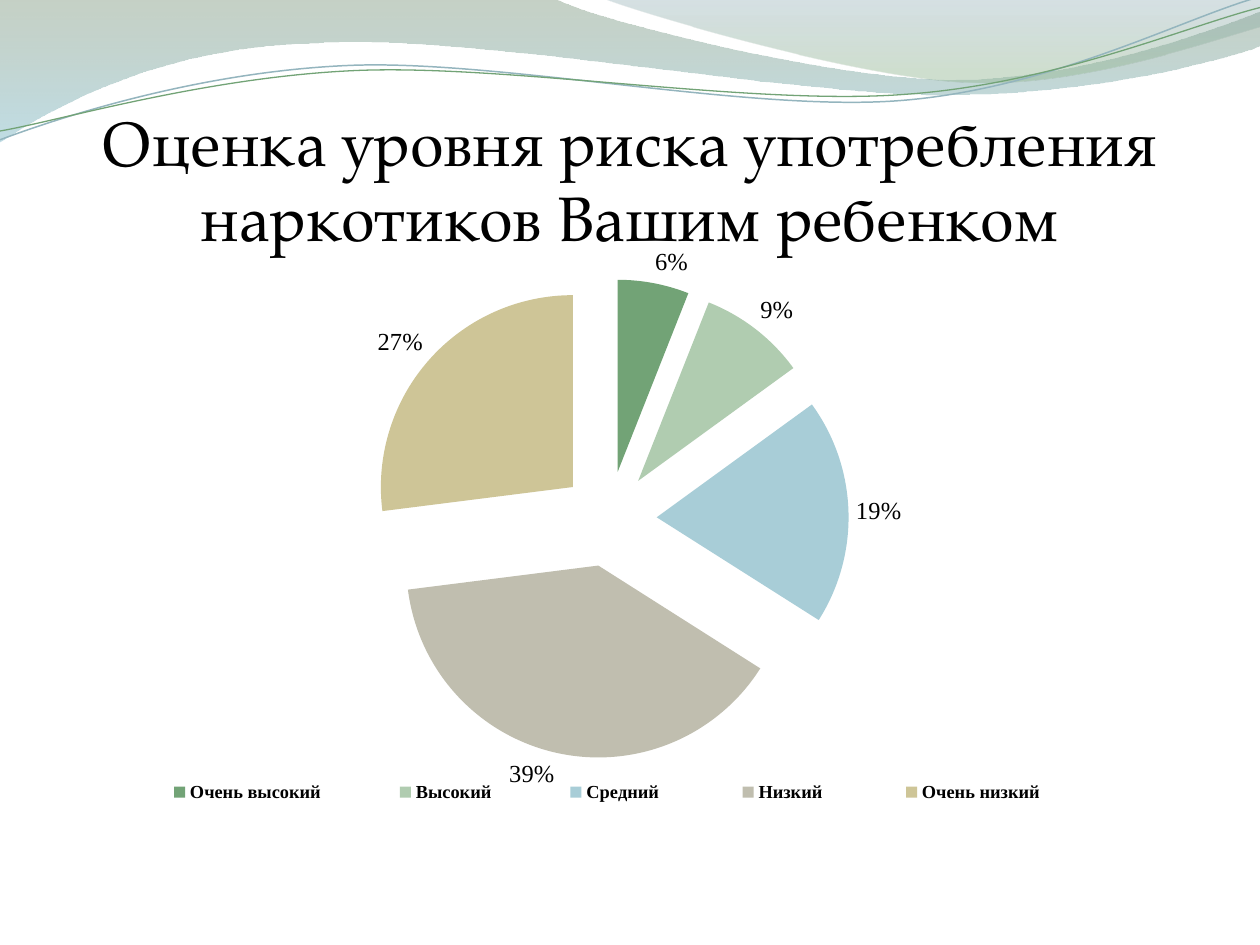
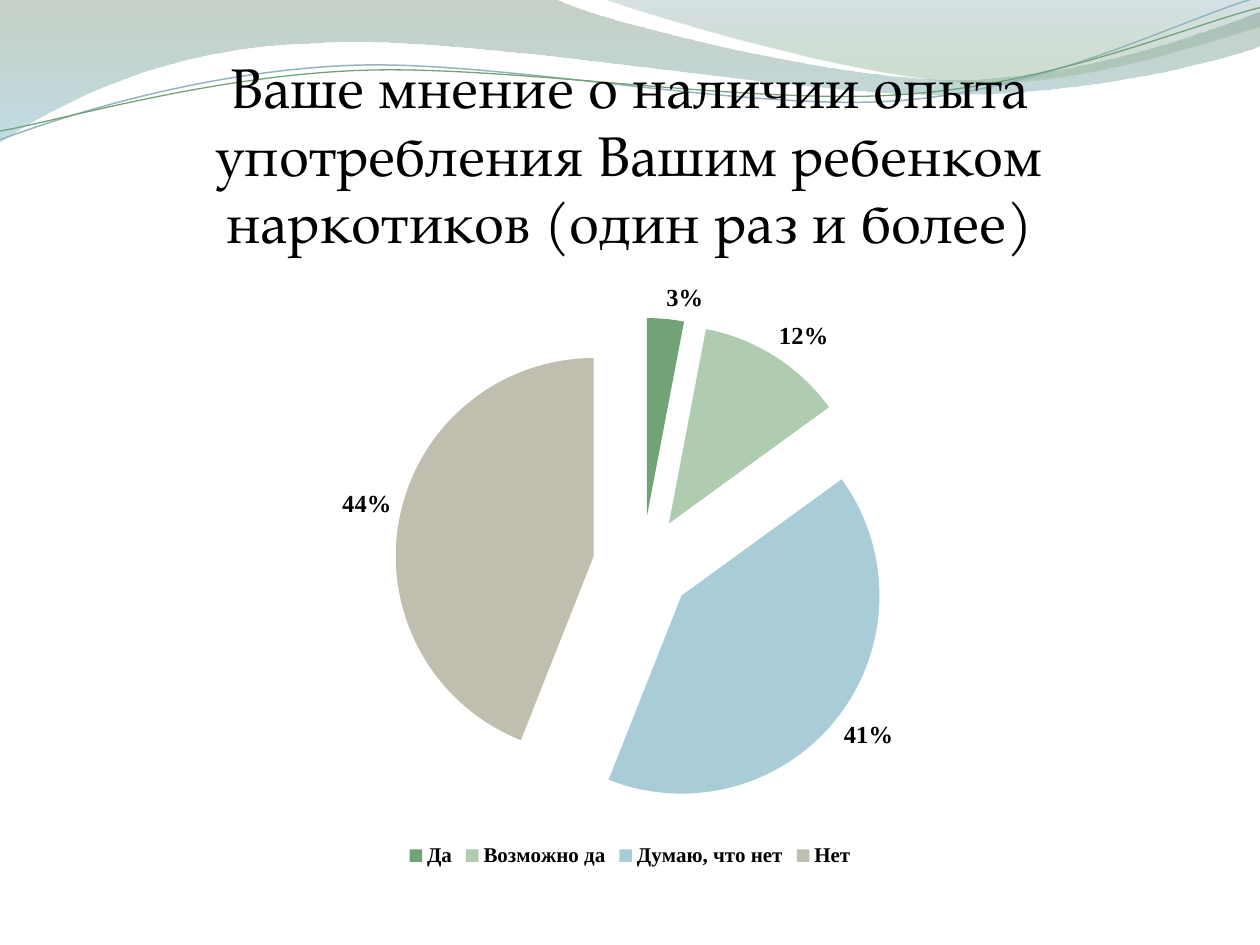
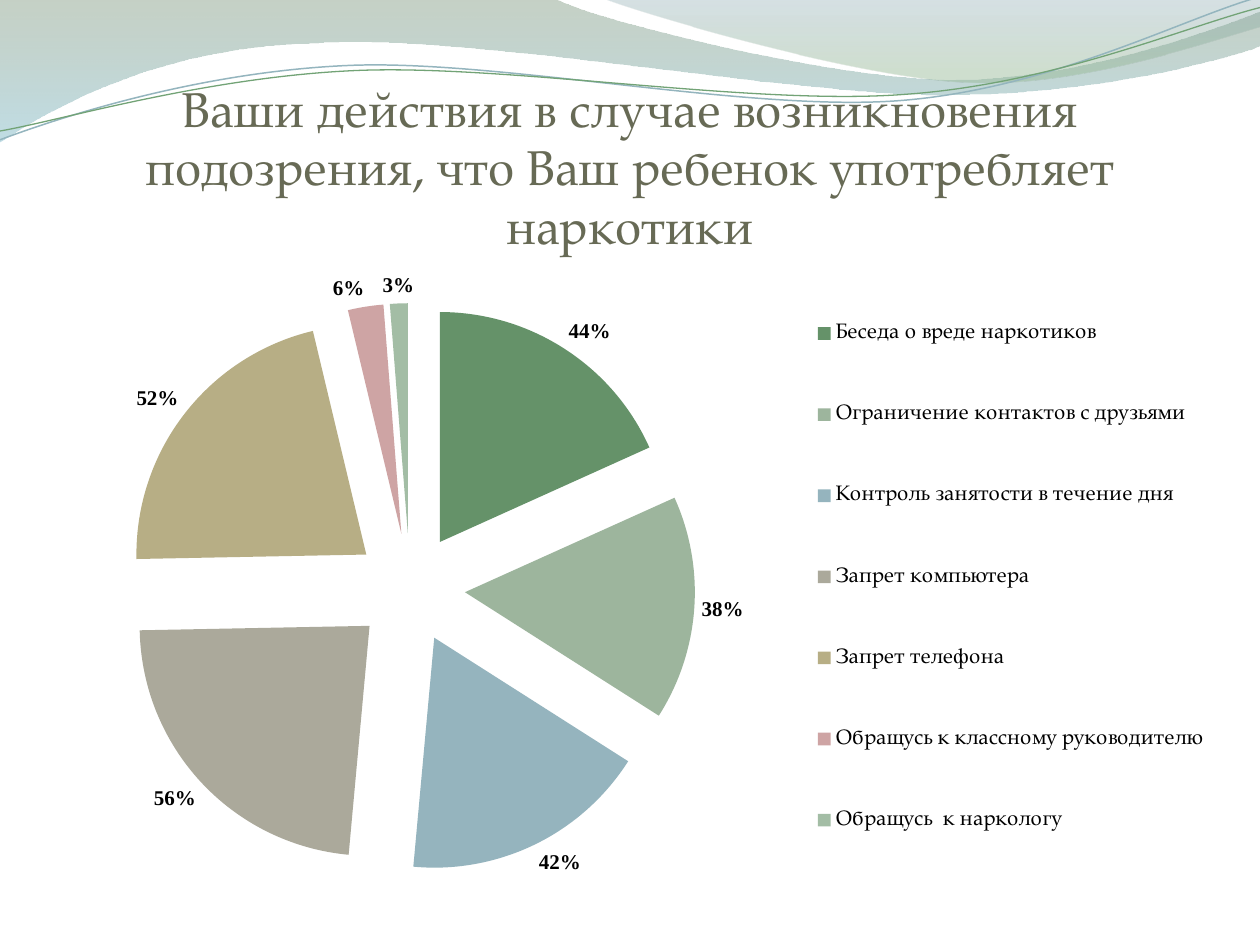
from dataclasses import dataclass

from lxml.etree import SubElement
from pptx import Presentation
from pptx.chart.data import CategoryChartData
from pptx.dml.color import RGBColor
from pptx.enum.chart import XL_CHART_TYPE as CT, XL_LABEL_POSITION as LabelPos, XL_LEGEND_POSITION as LegendPos
from pptx.enum.text import MSO_ANCHOR as Anchor, PP_ALIGN as Align
from pptx.oxml.ns import qn
from pptx.util import Inches, Pt


@dataclass(frozen=True)
class Theme:
    title_font: str = "TeX Gyre Pagella"
    label_font: str = "Times New Roman"
    ink: str = "000000"
    olive: str = "676A55"
    base_size: float = 10
    slices: tuple = ("72A376", "B0CCB0", "A8CDD7", "C0BEAF", "CEC597")
    deep_slices: tuple = ("659269", "9DB59D", "95B4BE", "ABA99B", "B7AE85", "CEA4A4", "A3BDA5")


THEME = Theme()
WIDTH, HEIGHT = Inches(10), Inches(7.5)
# All boxes are left, top, width, height in percent of the slide or chart.
TITLE_BOX = (5, 10.27, 90, 16.67)

# Wave outlines in tenths of the slide width: a start, then cubic curves or
# single line ends. Bands add gradient stops (position, colour, opacity %).
BANDS = [
    ([(0, 0), [(4.4, -0.01)],
      [(4.76, 0.17), (6.64, 0.63), (7.58, 0.63)],
      [(8.53, 0.63), (9.58, 0.26), (10, 0.09)],
      [(10.01, 0.36)],
      [(9.83, 0.44), (8.7, 0.76), (7.46, 0.75)],
      [(6.22, 0.75), (3.82, 0.28), (2.57, 0.34)],
      [(1.29, 0.36), (0.46, 0.83), (-0.01, 1.13)]],
     [(0, "809980", 45), (1, "8DC1CF", 55)]),
    ([(4.79, -0.01),
      [(5.09, 0.11), (6.82, 0.62), (7.69, 0.65)],
      [(8.56, 0.69), (9.61, 0.32), (10, 0.21)],
      [(10, 0)]],
     [(0, "779BA4", 30), (0.8, "96B996", 45)]),
]
STRANDS = [
    ([(0, 1.11),
      [(0.48, 0.93), (1.58, 0.57), (2.77, 0.52)],
      [(3.95, 0.47), (5.93, 0.89), (7.13, 0.8)],
      [(8.33, 0.71), (9.38, 0.15), (9.98, -0.02)]],
     "94B5BE", 0.85),
    ([(0, 1.04),
      [(0.47, 0.96), (1.64, 0.61), (2.83, 0.56)],
      [(4.03, 0.51), (5.97, 0.84), (7.17, 0.75)],
      [(8.36, 0.67), (9.41, 0.21), (10, 0.06)]],
     "72A376", 0.75),
]


def rgb(color):
    return RGBColor.from_string(color)


def place(box):
    """Turn percentages of the slide into lengths."""
    return [round(share * side / 100) for share, side in zip(box, (WIDTH, HEIGHT) * 2)]


def style_font(font, size, name, color=THEME.ink, bold=False):
    font.size, font.name, font.bold = Pt(size), name, bold
    font.color.rgb = rgb(color)


def add_outline(slide, outline, closed):
    """Draw the control points as a freeform, then bend each triple into a cubic curve."""
    unit = WIDTH / 10
    start, *segments = outline
    points = [start, *(point for segment in segments for point in segment)]
    first, *rest = [(round(x * unit), round(y * unit)) for x, y in points]
    builder = slide.shapes.build_freeform(*first)
    builder.add_line_segments(rest, close=closed)
    sp = builder.convert_to_shape()
    sp.shadow.inherit = False

    lines = iter(list(sp._element.iter(qn("a:lnTo"))))
    for segment in segments:
        group = [next(lines) for _ in segment]
        if len(group) == 3:
            curve = SubElement(group[0].getparent(), qn("a:cubicBezTo"))
            group[0].addprevious(curve)
            for line in group:
                curve.append(line[0])
                line.getparent().remove(line)
    return sp


def add_waves(slide):
    for outline, stops in BANDS:
        sp = add_outline(slide, outline, True)
        sp.line.fill.background()
        sp.fill.gradient()
        sp.fill.gradient_angle = 270
        for stop, (position, color, _) in zip(sp.fill.gradient_stops, stops):
            stop.position, stop.color.rgb = position, rgb(color)
        for clr, (_, _, opacity) in zip(sp._element.iter(qn("a:srgbClr")), stops):
            SubElement(clr, qn("a:alpha")).set("val", str(opacity * 1000))
    for outline, color, width in STRANDS:
        sp = add_outline(slide, outline, False)
        sp.fill.background()
        sp.line.color.rgb, sp.line.width = rgb(color), Pt(width)


def add_title(slide, box, text, size, color):
    tf = slide.shapes.add_textbox(*place(box)).text_frame
    tf.word_wrap, tf.vertical_anchor = True, Anchor.BOTTOM
    tf.margin_left = tf.margin_right = tf.margin_bottom = 0
    p = tf.paragraphs[0]
    p.alignment = Align.CENTER
    r = p.add_run()
    r.text = text
    style_font(r.font, size, THEME.title_font, color)


def set_layout(parent, index, box, inner=False):
    """Fix a chart part at percentages of the chart."""
    for old in parent.findall(qn("c:layout")):
        parent.remove(old)
    layout = parent.makeelement(qn("c:layout"), {})
    parent.insert(index, layout)
    manual = SubElement(layout, qn("c:manualLayout"))
    settings = [("layoutTarget", "inner")] if inner else []
    settings += [("xMode", "edge"), ("yMode", "edge")]
    settings += [(tag, round(share / 100, 4)) for tag, share in zip("xywh", box)]
    for tag, value in settings:
        SubElement(manual, qn(f"c:{tag}")).set("val", str(value))


def add_pie(slide, box, answers, colors, plot, explosion, label_size, label_bold,
            legend_at, legend_font, legend_box=None):
    data = CategoryChartData(number_format="0%")
    data.categories = list(answers)
    data.add_series("Series 1", list(answers.values()))
    chart = slide.shapes.add_chart(CT.PIE, *place(box), data).chart
    chart.has_title = False
    style_font(chart.font, THEME.base_size, THEME.title_font)

    pie = chart.plots[0]
    pie.vary_by_categories = True
    series = pie.series[0]
    ser = series._element
    exploded = ser.makeelement(qn("c:explosion"), {"val": str(explosion)})
    ser.find(qn("c:tx")).addnext(exploded)
    for i, color in zip(range(len(answers)), colors):
        fill = series.points[i].format.fill
        fill.solid()
        fill.fore_color.rgb = rgb(color)

    labels = series.data_labels
    labels.show_value, labels.position = True, LabelPos.OUTSIDE_END
    labels.number_format, labels.number_format_is_linked = "0%", False
    style_font(labels.font, label_size, THEME.label_font, bold=label_bold)

    chart.has_legend = True
    legend = chart.legend
    legend.position, legend.include_in_layout = legend_at, False
    style_font(legend.font, **legend_font)
    if legend_box:
        set_layout(legend._element, 1, legend_box)
    set_layout(chart._chartSpace.find(".//" + qn("c:plotArea")), 0, plot, inner=True)


def add_survey_slide(prs, title, title_size, title_color=THEME.ink, **pie):
    slide = prs.slides.add_slide(prs.slide_layouts[6])
    add_waves(slide)
    add_title(slide, TITLE_BOX, title, title_size, title_color)
    add_pie(slide, **pie)


def main():
    prs = Presentation()
    prs.slide_width, prs.slide_height = WIDTH, HEIGHT
    add_survey_slide(
        prs, "Оценка уровня риска употребления наркотиков Вашим ребенком", 36,
        box=(4.7, 24.27, 89.8, 65.33),
        answers={"Очень высокий": 0.06, "Высокий": 0.09, "Средний ": 0.19,
                 "Низкий ": 0.39, "Очень низкий": 0.27},
        colors=THEME.slices, plot=(27.37, 8.03, 42.4, 77.75), explosion=25,
        label_size=14, label_bold=False, legend_at=LegendPos.BOTTOM,
        legend_font=dict(size=10.5, name=THEME.label_font, bold=True),
        legend_box=(3.72, 87.68, 89.4, 7))
    add_survey_slide(
        prs, "Ваше мнение о наличии опыта употребления Вашим ребенком наркотиков (один раз и более)", 32,
        box=(5, 28.27, 90, 64),
        answers={"Да": 0.03, "Возможно да": 0.12, "Думаю, что нет": 0.41, "Нет": 0.44},
        colors=THEME.slices, plot=(29.27, 8.4, 43.65, 81.85), explosion=25,
        label_size=14, label_bold=True, legend_at=LegendPos.BOTTOM,
        legend_font=dict(size=12, name=THEME.label_font, bold=True))
    add_survey_slide(
        prs, "Ваши действия в случае возникновения подозрения, что Ваш ребенок употребляет наркотики", 28,
        THEME.olive,
        box=(2.3, 27.07, 95.3, 68.8),
        answers={"Беседа о вреде наркотиков": 0.44, "Ограничение контактов с друзьями": 0.38,
                 "Контроль занятости в течение дня": 0.42, "Запрет компьютера": 0.56,
                 "Запрет телефона": 0.52, "Обращусь к классному руководителю": 0.06,
                 "Обращусь  к наркологу": 0.03},
        colors=THEME.deep_slices, plot=(7.98, 7.3, 47.5, 87.7), explosion=24,
        label_size=12, label_bold=True, legend_at=LegendPos.RIGHT,
        legend_font=dict(size=12, name=THEME.title_font),
        legend_box=(64.25, 1.1, 35, 96.6))
    prs.save("out.pptx")


if __name__ == "__main__":
    main()
